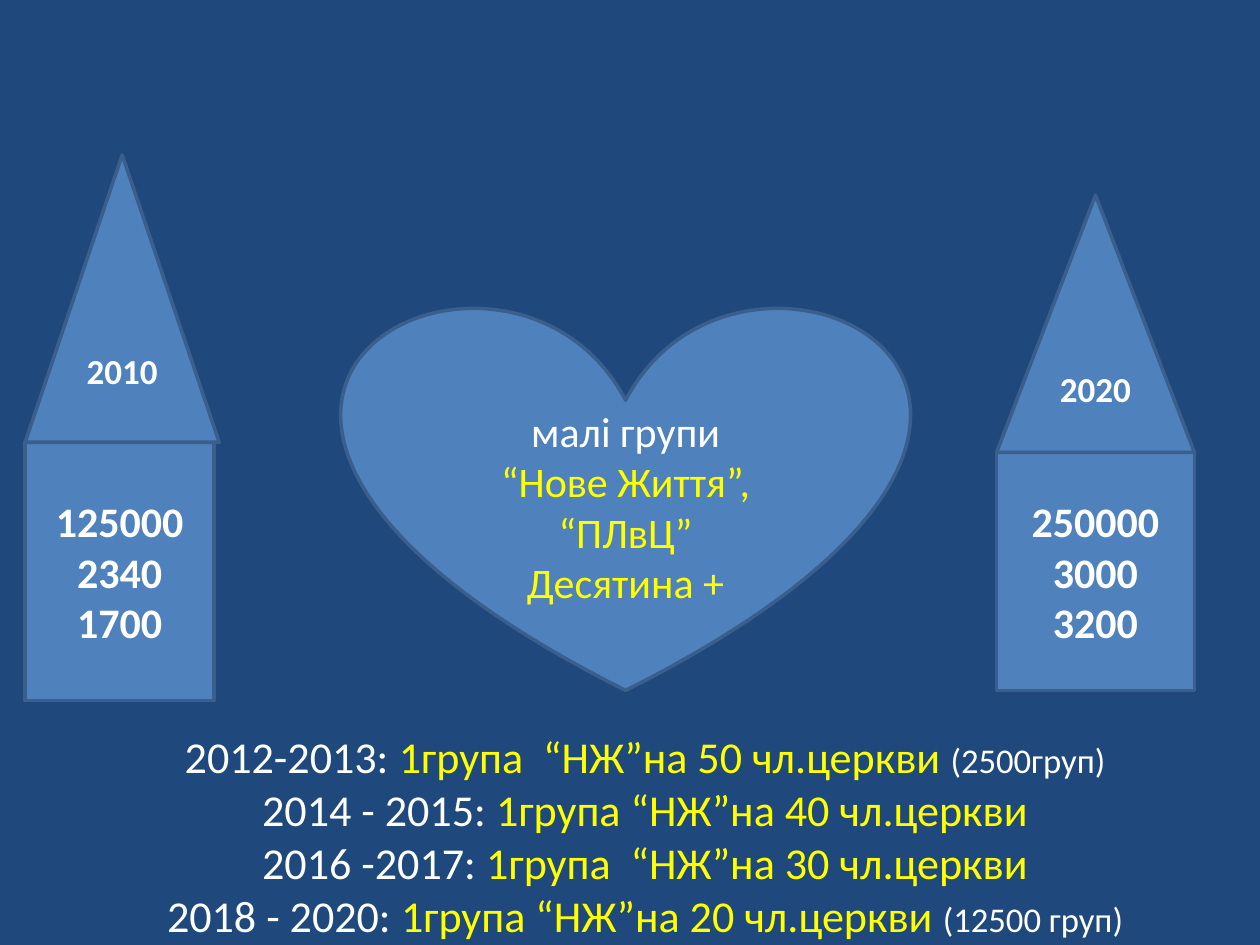
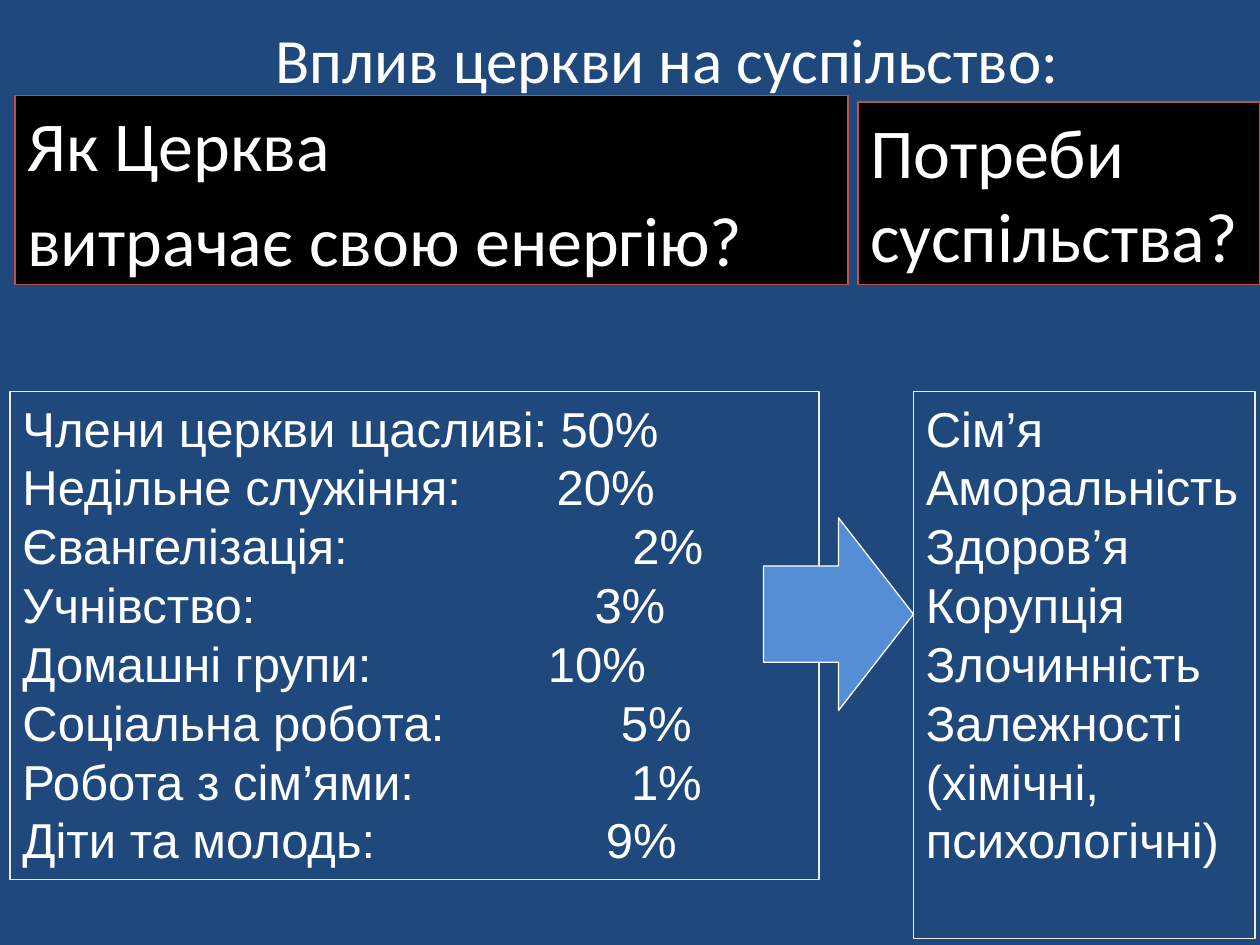
from pptx import Presentation
from pptx.dml.color import RGBColor
from pptx.enum import shapes, text
from pptx.oxml import ns, xmlchemy
from pptx.util import Inches, Pt

NAVY = RGBColor(0x1F, 0x49, 0x7D)
BLUE = RGBColor(0x4F, 0x81, 0xBD)
EDGE = RGBColor(0x3A, 0x5F, 0x8C)
SKY = RGBColor(0x55, 0x8E, 0xD5)
RED = RGBColor(0xC0, 0x50, 0x4D)
CREAM = RGBColor(0xEE, 0xEC, 0xE1)
BLACK = RGBColor(0, 0, 0)
WHITE = RGBColor(255, 255, 255)
YELLOW = RGBColor(255, 255, 0)

CENTER, LEFT = text.PP_ALIGN.CENTER, text.PP_ALIGN.LEFT
TOP, MIDDLE = text.MSO_ANCHOR.TOP, text.MSO_ANCHOR.MIDDLE
FORMS = shapes.MSO_SHAPE

GROUP_PLAN = [
    ("2012-2013: ", "1група  “НЖ”на 50 чл.церкви ", "(2500груп)"),
    ("2014 - 2015: ", "1група “НЖ”на 40 чл.церкви", ""),
    ("2016 -2017: ", "1група  “НЖ”на 30 чл.церкви", ""),
    ("2018 - 2020: ", "1група “НЖ”на 20 чл.церкви ", "(12500 груп)"),
]
# Activity, share and the tab position of the share in inches
ENERGY = [
    ("Члени церкви щасливі:", "50%", 4.27),
    ("Недільне служіння:", "20%", 4.24),
    ("Євангелізація:", "2%", 4.84),
    ("Учнівство:", "3%", 4.54),
    ("Домашні групи:", "10%", 4.17),
    ("Соціальна робота:", "5%", 4.75),
    ("Робота з сім’ями:", "1%", 4.83),
    ("Діти та молодь:", "9%", 4.63),
]
NEEDS = ["Сім’я", "Аморальність", "Здоров’я", "Корупція", "Злочинність",
         "Залежності", "(хімічні,", "психологічні)"]


def style(span, size, color=WHITE, font="Calibri", bold=False):
    span.font.size = Pt(size)
    span.font.name = font
    span.font.bold = bold
    span.font.color.rgb = color


def add_lines(shape, lines, size, align=CENTER, anchor=MIDDLE, **look):
    frame = shape.text_frame
    frame.word_wrap = True
    frame.vertical_anchor = anchor
    frame.text = "\n".join(lines)
    for para in frame.paragraphs:
        para.alignment = align
        for span in para.runs:
            style(span, size, **look)
    return frame


def add_form(page, form, box, fill, line, width):
    shape = page.shapes.add_shape(form, *map(Inches, box))
    shape.shadow.inherit = False
    if fill is None:
        shape.fill.background()
    else:
        shape.fill.solid()
        shape.fill.fore_color.rgb = fill
    shape.line.color.rgb = line
    shape.line.width = Pt(width)
    return shape


def place_title(page, box):
    title = page.shapes.title
    title.left, title.top, title.width, title.height = map(Inches, box)
    title.text_frame.auto_size = text.MSO_AUTO_SIZE.NONE
    return title


def add_group_plan(page, box):
    frame = place_title(page, box).text_frame
    frame.word_wrap = True
    frame.vertical_anchor = MIDDLE
    frame.margin_bottom = Inches(0.34)
    for index, parts in enumerate(GROUP_PLAN):
        para = frame.add_paragraph() if index else frame.paragraphs[0]
        para.alignment = CENTER
        for part, size, color in zip(parts, (25.2, 25.2, 19.8), (WHITE, YELLOW, WHITE)):
            if part:
                span = para.add_run()
                span.text = part
                style(span, size, color)


def add_church(page, box, roof_width, roof_height, year, figures):
    """Walls fill the lower part of the box, the roof stands on top."""
    left, top, width, height = box
    walls = add_form(page, FORMS.RECTANGLE,
                     (left, top + roof_height, width, height - roof_height), BLUE, EDGE, 2)
    add_lines(walls, figures, 24, bold=True)
    roof = add_form(page, FORMS.FLOWCHART_EXTRACT,
                    (left, top, roof_width, roof_height), BLUE, EDGE, 2)
    add_lines(roof, [year], 20, bold=True)


def add_heart(page, box):
    heart = add_form(page, FORMS.HEART, box, BLUE, EDGE, 2)
    frame = add_lines(heart, ["малі групи", "“Нове Життя”,", "“ПЛвЦ”", "Десятина +"],
                      24, color=YELLOW)
    frame.margin_top = Inches(0.45)
    frame.paragraphs[0].runs[0].font.color.rgb = WHITE


def add_heading(page, box, lines, gap=0):
    panel = add_form(page, FORMS.RECTANGLE, box, BLACK, RED, 0.75)
    frame = add_lines(panel, lines, 40, LEFT, TOP)
    frame.paragraphs[1].space_before = Pt(gap)


def add_list(page, box, lines):
    panel = add_form(page, FORMS.RECTANGLE, box, None, CREAM, 0.75)
    return add_lines(panel, lines, 28, LEFT, TOP, font="Arial")


def set_tab(para, position):
    tabs = xmlchemy.OxmlElement("a:tabLst")
    tab = xmlchemy.OxmlElement("a:tab")
    tab.set("pos", str(Inches(position)))
    tab.set("algn", "l")
    tabs.append(tab)
    props = para._p.get_or_add_pPr()
    props.append(tabs)


def build_growth_slide(page):
    add_group_plan(page, (0.59, 6.17, 9.06, 1.21))
    add_church(page, (0.2, 1.23, 1.5, 4.33), 1.54, 2.28, "2010", ["125000", "2340", "1700"])
    add_church(page, (7.91, 1.55, 1.57, 3.93), 1.57, 2.04, "2020", ["250000", "3000", "3200"])
    add_heart(page, (2.72, 2.41, 4.49, 3.07))


def build_influence_slide(page):
    title = place_title(page, (0.59, 0, 9.41, 0.92))
    add_lines(title, ["Вплив церкви на суспільство:"], 36)

    # Headings
    add_heading(page, (0.12, 0.76, 6.61, 1.5), ["Як Церква", "витрачає свою енергію?"], gap=6)
    add_heading(page, (6.81, 0.81, 3.19, 1.45), ["Потреби", "суспільства?"])

    # Lists
    energy = add_list(page, (0.08, 3.11, 6.42, 3.87),
                      [f"{name}\t{share}" for name, share, _ in ENERGY])
    for para, (_, _, position) in zip(energy.paragraphs, ENERGY):
        set_tab(para, position)
    needs = add_list(page, (7.25, 3.11, 2.71, 4.34), NEEDS)
    needs.word_wrap = False

    # Arrow from the church to society
    add_form(page, FORMS.RIGHT_ARROW, (6.06, 4.11, 1.19, 1.53), SKY, WHITE, 0.75)


def main():
    deck = Presentation()
    deck.slide_width, deck.slide_height = Inches(10), Inches(7.5)
    backdrop = deck.slide_master.background.fill
    backdrop.solid()
    backdrop.fore_color.rgb = NAVY
    for build in (build_growth_slide, build_influence_slide):
        build(deck.slides.add_slide(deck.slide_layouts[5]))
    deck.save("out.pptx")


if __name__ == "__main__":
    main()
